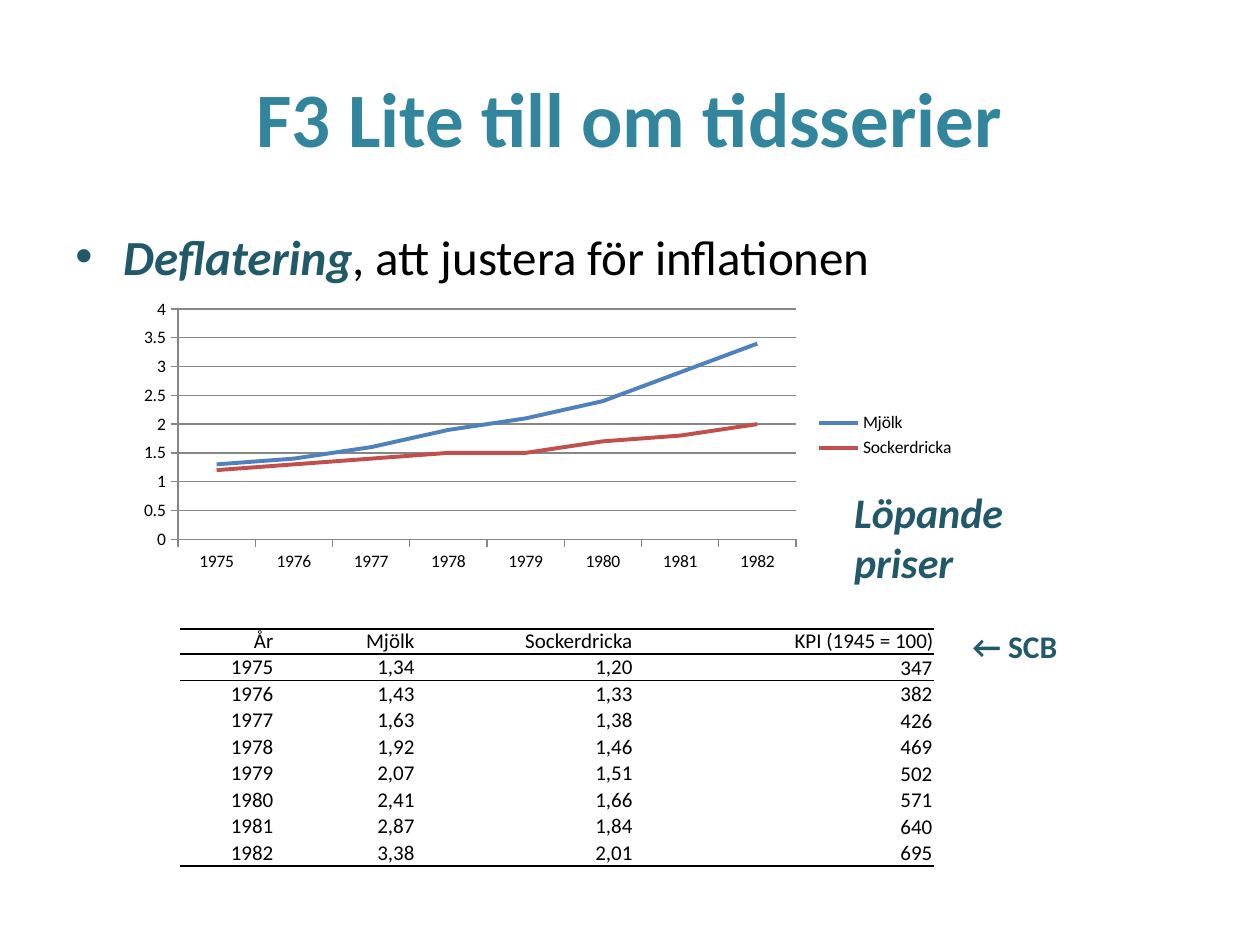
from lxml import etree
from pptx import Presentation
from pptx.chart.data import CategoryChartData
from pptx.dml.color import RGBColor
from pptx.enum.chart import XL_CHART_TYPE, XL_LEGEND_POSITION, XL_MARKER_STYLE, XL_TICK_MARK
from pptx.enum.text import MSO_ANCHOR, PP_ALIGN
from pptx.oxml.ns import qn
from pptx.util import Inches, Pt

TEAL, DARK_TEAL, BLACK, GRID = "31859C", "215968", "000000", "868686"
MILK_BLUE, SODA_RED = "4F81BD", "C0504D"
PLAIN_TABLE_STYLE = "{2D5ABB26-0587-4C30-8999-92F81FD0307C}"

HEADINGS = ["År", "Mjölk", "Sockerdricka", "KPI (1945 = 100)"]
PRICES = [
    (1975, 1.34, 1.20, 347),
    (1976, 1.43, 1.33, 382),
    (1977, 1.63, 1.38, 426),
    (1978, 1.92, 1.46, 469),
    (1979, 2.07, 1.51, 502),
    (1980, 2.41, 1.66, 571),
    (1981, 2.87, 1.84, 640),
    (1982, 3.38, 2.01, 695),
]


def rgb(value):
    return RGBColor.from_string(value)


def style_font(font, color=BLACK, **formats):
    font.color.rgb = rgb(color)
    for name, value in {"name": "Calibri", **formats}.items():
        setattr(font, name, value)


def add_text(slide, box, runs, **formats):
    """Place one paragraph made of (text, font formats) runs."""
    frame = slide.shapes.add_textbox(*map(Inches, box)).text_frame
    frame.word_wrap = True
    frame.vertical_anchor = formats.pop("anchor", MSO_ANCHOR.TOP)
    paragraph = frame.paragraphs[0]
    for name, value in formats.items():
        setattr(paragraph, name, value)
    for text, font in runs:
        run = paragraph.add_run()
        run.text = text
        style_font(run.font, **font)
    return paragraph


def add_title(slide, box):
    add_text(slide, box,
             [("F3 Lite till om tidsserier", {"size": Pt(44), "color": TEAL, "bold": True})],
             alignment=PP_ALIGN.CENTER, anchor=MSO_ANCHOR.MIDDLE)


def add_bullet(slide, box):
    paragraph = add_text(slide, box, [
        ("Deflatering", {"size": Pt(28), "color": DARK_TEAL, "bold": True, "italic": True}),
        (", att justera för inflationen", {"size": Pt(28)}),
    ], space_before=Pt(5.6))
    properties = paragraph._p.get_or_add_pPr()
    properties.set("marL", str(Inches(0.38)))
    properties.set("indent", str(-Inches(0.38)))
    etree.SubElement(properties, qn("a:buFont")).set("typeface", "Arial")
    etree.SubElement(properties, qn("a:buChar")).set("char", "•")


def add_price_chart(slide, box):
    data = CategoryChartData()
    data.categories = [str(row[0]) for row in PRICES]
    for column in (1, 2):
        data.add_series(HEADINGS[column], [round(row[column], 1) for row in PRICES])
    chart = slide.shapes.add_chart(XL_CHART_TYPE.LINE, *map(Inches, box), data).chart
    style_font(chart.font, size=Pt(10))
    chart.has_title = False
    chart.has_legend = True
    chart.legend.position = XL_LEGEND_POSITION.RIGHT
    chart.legend.include_in_layout = False
    chart.plots[0].vary_by_categories = False

    # Series lines
    for series, color in zip(chart.plots[0].series, (MILK_BLUE, SODA_RED)):
        series.smooth = False
        series.marker.style = XL_MARKER_STYLE.NONE
        series.format.line.color.rgb = rgb(color)
        series.format.line.width = Pt(2.25)

    # Axes and gridlines
    prices = chart.value_axis
    prices.minimum_scale, prices.maximum_scale, prices.major_unit = 0, 4, 0.5
    prices.has_major_gridlines = True
    for axis in (chart.category_axis, prices):
        axis.major_tick_mark = XL_TICK_MARK.OUTSIDE
    for part in (chart.category_axis, prices, prices.major_gridlines):
        part.format.line.color.rgb = rgb(GRID)
        part.format.line.width = Pt(0.75)


def add_rule(cell, tag, position):
    line = etree.Element(qn(tag), w=str(Pt(1)))
    fill = etree.SubElement(line, qn("a:solidFill"))
    etree.SubElement(fill, qn("a:srgbClr")).set("val", BLACK)
    cell._tc.get_or_add_tcPr().insert(position, line)


def swedish(value):
    return f"{value:.2f}".replace(".", ",") if isinstance(value, float) else str(value)


def add_price_table(slide, box):
    rows = [HEADINGS] + [[swedish(value) for value in row] for row in PRICES]
    table = slide.shapes.add_table(len(rows), len(HEADINGS), *map(Inches, box)).table
    table.first_row = table.horz_banding = False
    table._tbl.tblPr.find(qn("a:tableStyleId")).text = PLAIN_TABLE_STYLE
    for column, width in zip(table.columns, (0.74, 1.12, 1.73, 2.39)):
        column.width = Inches(width)
    for r, values in enumerate(rows):
        table.rows[r].height = Inches(0.21 if r else 0.2)
        for c, value in enumerate(values):
            cell = table.cell(r, c)
            is_kpi = c == len(HEADINGS) - 1
            inset = Inches(0.01 if is_kpi and r else 0)
            formats = {
                "margin_left": inset, "margin_right": inset,
                "margin_top": inset, "margin_bottom": 0,
                "vertical_anchor": MSO_ANCHOR.MIDDLE if is_kpi else MSO_ANCHOR.BOTTOM,
            }
            for name, setting in formats.items():
                setattr(cell, name, setting)
            cell.fill.background()
            paragraph = cell.text_frame.paragraphs[0]
            paragraph.alignment = PP_ALIGN.RIGHT
            run = paragraph.add_run()
            run.text = value
            style_font(run.font, size=Pt(12), bold=False)
            # Rules around the heading and under the last row
            if r in (0, 1):
                add_rule(cell, "a:lnT", 0)
            if r in (0, len(rows) - 1):
                add_rule(cell, "a:lnB", 1 if r == 0 else 0)


def add_side_note(slide, box, text, size, italic=False):
    font = {"size": Pt(size), "color": DARK_TEAL, "bold": True, "italic": italic}
    add_text(slide, box, [(text, font)], space_before=Pt(size * 0.2))


def main():
    deck = Presentation()
    deck.slide_width, deck.slide_height = Inches(10), Inches(7.5)
    slide = deck.slides.add_slide(deck.slide_layouts[6])
    add_title(slide, (0.5, 0.3, 9, 1.25))
    add_bullet(slide, (0.5, 1.75, 9, 5.37))
    add_price_chart(slide, (1.01, 2.33, 6.67, 2.25))
    add_price_table(slide, (1.43, 4.99, 5.98, 1.88))
    add_side_note(slide, (6.68, 3.81, 2.1, 0.65), "Löpande priser", 24, italic=True)
    add_side_note(slide, (7.62, 4.93, 2.1, 0.65), "← SCB", 18)
    deck.save("out.pptx")


if __name__ == "__main__":
    main()
